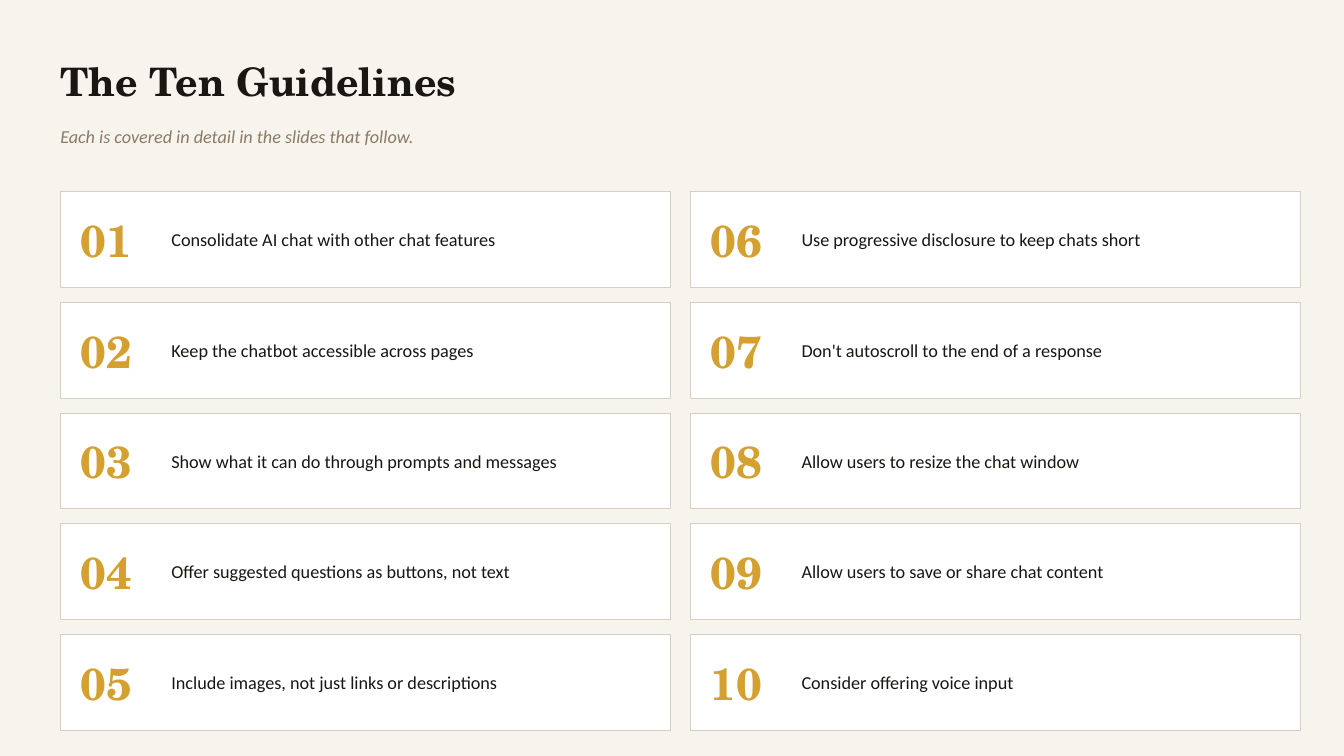
import pptx
import pptx.util
import pptx.dml.color
import pptx.enum.shapes
import pptx.enum.text

TITLE = "The Ten Guidelines"
SUBTITLE = "Each is covered in detail in the slides that follow."
GUIDELINES = [
    "Consolidate AI chat with other chat features",
    "Keep the chatbot accessible across pages",
    "Show what it can do through prompts and messages",
    "Offer suggested questions as buttons, not text",
    "Include images, not just links or descriptions",
    "Use progressive disclosure to keep chats short",
    "Don't autoscroll to the end of a response",
    "Allow users to resize the chat window",
    "Allow users to save or share chat content",
    "Consider offering voice input",
]

COLORS = {
    "background": "F7F4EE",
    "card": "FFFFFF",
    "border": "D8CFC0",
    "ink": "1A1612",
    "muted": "8A7A66",
    "gold": "D4A030",
}
SERIF, SANS = "TeX Gyre Schola", "Calibri"
STYLES = {
    "title": ("ink", {"name": SERIF, "size": pptx.util.Pt(28), "bold": True}),
    "subtitle": ("muted", {"name": SANS, "size": pptx.util.Pt(13), "italic": True}),
    "number": ("gold", {"name": SERIF, "size": pptx.util.Pt(32), "bold": True}),
    "label": ("ink", {"name": SANS, "size": pptx.util.Pt(13)}),
}
FRAME = {
    "margin_left": 0,
    "margin_top": 0,
    "margin_right": 0,
    "margin_bottom": 0,
    "word_wrap": True,
    "auto_size": pptx.enum.text.MSO_AUTO_SIZE.NONE,
    "vertical_anchor": pptx.enum.text.MSO_ANCHOR.MIDDLE,
}

ROWS = 5
LEFT, TOP = 1.52, 4.83
CARD_W, CARD_H = 15.37, 2.41
GAP_X, GAP_Y = 0.51, 0.38
PAD_X, PAD_Y = 0.51, 0.13
NUMBER_W = 2.29
HEAD_W = 30.48


def cm(*lengths):
    return [pptx.util.Cm(length) for length in lengths]


def rgb(name):
    return pptx.dml.color.RGBColor.from_string(COLORS[name])


def write(sp, text, style):
    color, font = STYLES[style]
    tf = sp.text_frame
    for key, value in FRAME.items():
        setattr(tf, key, value)
    p = tf.paragraphs[0]
    p.alignment = pptx.enum.text.PP_ALIGN.LEFT
    r = p.add_run()
    r.text = text
    for key, value in font.items():
        setattr(r.font, key, value)
    r.font.color.rgb = rgb(color)


def add_text(slide, box, text, style):
    write(slide.shapes.add_textbox(*cm(*box)), text, style)


def add_card(slide, x, y, number, label):
    sp = slide.shapes.add_shape(
        pptx.enum.shapes.MSO_SHAPE.RECTANGLE, *cm(x, y, CARD_W, CARD_H)
    )
    sp.shadow.inherit = False
    sp.fill.solid()
    sp.fill.fore_color.rgb = rgb("card")
    sp.line.color.rgb = rgb("border")
    sp.line.width = pptx.util.Pt(0.5)

    text_y, text_h = y + PAD_Y, CARD_H - 2 * PAD_Y
    number_x = x + PAD_X
    label_w = CARD_W - 2 * PAD_X - NUMBER_W
    add_text(slide, (number_x, text_y, NUMBER_W, text_h), f"{number:02d}", "number")
    add_text(slide, (number_x + NUMBER_W, text_y, label_w, text_h), label, "label")


def main():
    prs = pptx.Presentation()
    prs.slide_width, prs.slide_height = cm(33.87, 19.05)
    slide = prs.slides.add_slide(prs.slide_layouts[5])
    slide.background.fill.solid()
    slide.background.fill.fore_color.rgb = rgb("background")

    title = slide.shapes.title
    title.left, title.top, title.width, title.height = cm(LEFT, 1.27, HEAD_W, 1.52)
    write(title, TITLE, "title")
    add_text(slide, (LEFT, 2.92, HEAD_W, 1.02), SUBTITLE, "subtitle")

    for i, label in enumerate(GUIDELINES):
        col, row = divmod(i, ROWS)
        x = LEFT + col * (CARD_W + GAP_X)
        y = TOP + row * (CARD_H + GAP_Y)
        add_card(slide, x, y, i + 1, label)

    prs.save("out.pptx")


if __name__ == "__main__":
    main()
